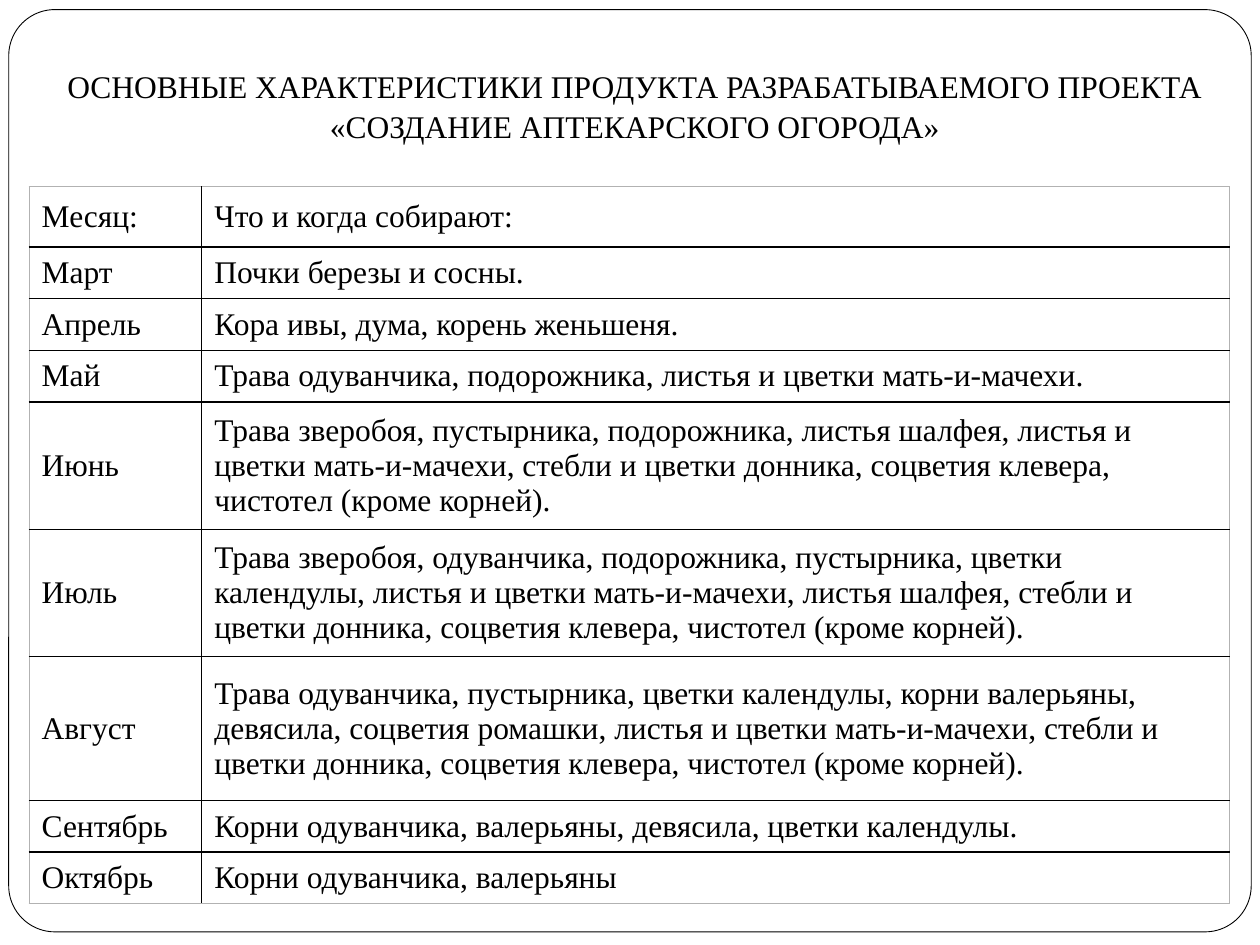
from lxml import etree
from pptx import Presentation
from pptx.dml.color import RGBColor
from pptx.enum.shapes import MSO_SHAPE
from pptx.enum.text import MSO_ANCHOR, PP_ALIGN
from pptx.oxml.ns import qn
from pptx.util import Pt

BLACK = RGBColor(0, 0, 0)
WHITE = RGBColor(255, 255, 255)
GREY = RGBColor(0xB2, 0xB2, 0xB2)
ROUND = MSO_SHAPE.ROUNDED_RECTANGLE
MIDDLE, BOTTOM = MSO_ANCHOR.MIDDLE, MSO_ANCHOR.BOTTOM
CENTER = PP_ALIGN.CENTER
FONT, SIZE = "Times New Roman", Pt(18)

TITLE = ("ОСНОВНЫЕ ХАРАКТЕРИСТИКИ ПРОДУКТА РАЗРАБАТЫВАЕМОГО ПРОЕКТА",
         "«СОЗДАНИЕ АПТЕКАРСКОГО ОГОРОДА»")
COLS = (98.7, 587.5)
# Row height, month, what is gathered
ROWS = [
    (34.6, "Месяц:", "Что и когда собирают:"),
    (29.5, "Март", "Почки березы и сосны."),
    (29.5, "Апрель", "Кора ивы, дума, корень женьшеня."),
    (29.5, "Май", "Трава одуванчика, подорожника, листья и цветки мать-и-мачехи."),
    (72.8, "Июнь", "Трава зверобоя, пустырника, подорожника, листья шалфея, "
     "листья и цветки мать-и-мачехи, стебли и цветки донника, "
     "соцветия клевера, чистотел (кроме корней)."),
    (72.8, "Июль", "Трава зверобоя, одуванчика, подорожника, пустырника, "
     "цветки календулы, листья и цветки мать-и-мачехи, листья шалфея, "
     "стебли и цветки донника, соцветия клевера, чистотел (кроме корней)."),
    (82.3, "Август", "Трава одуванчика, пустырника, цветки календулы, "
     "корни валерьяны, девясила, соцветия ромашки, листья и цветки "
     "мать-и-мачехи, стебли и цветки донника, соцветия клевера, "
     "чистотел (кроме корней)."),
    (29.5, "Сентябрь", "Корни одуванчика, валерьяны, девясила, цветки календулы."),
    (29.5, "Октябрь", "Корни одуванчика, валерьяны"),
]


def add_run(para, text):
    run = para.add_run()
    run.text = text
    run.font.name, run.font.size = FONT, SIZE
    run.font.color.rgb = BLACK


def set_edge(cell, tag, color, width):
    props = cell._tc.get_or_add_tcPr()
    line = etree.SubElement(props, qn("a:" + tag), w=str(Pt(width)))
    fill = etree.SubElement(line, qn("a:solidFill"))
    etree.SubElement(fill, qn("a:srgbClr"), val=str(color))


def fill_cell(cell, text, outer):
    # Outer edges are pale, inner ones black; edges go before the fill
    for tag, pale in outer.items():
        set_edge(cell, tag, GREY if pale else BLACK, 0.5 if pale else 1)
    cell.fill.solid()
    cell.fill.fore_color.rgb = WHITE
    cell.vertical_anchor = MIDDLE
    para = cell.text_frame.paragraphs[0]
    para.line_spacing = Pt(20)
    add_run(para, text)


deck = Presentation()
deck.slide_width, deck.slide_height = Pt(720), Pt(540)
slide = deck.slides.add_slide(deck.slide_layouts[6])
shapes = slide.shapes

# Rounded frame
frame = shapes.add_shape(ROUND, Pt(5), Pt(5.5), Pt(710), Pt(527))
frame.adjustments[0] = 0.05
frame.shadow.inherit = False
frame.fill.solid()
frame.fill.fore_color.rgb = WHITE
frame.line.color.rgb = BLACK
frame.line.width = Pt(0.5)

# Title
box = shapes.add_textbox(Pt(28), Pt(0), Pt(669.6), Pt(90)).text_frame
box.word_wrap = True
box.vertical_anchor = BOTTOM
box.margin_bottom = Pt(7.2)
para = box.paragraphs[0]
para.alignment = CENTER
para.line_spacing = 1.05
add_run(para, TITLE[0])
para.add_line_break()
add_run(para, TITLE[1])

# Harvest table
high = sum(row[0] for row in ROWS)
table = shapes.add_table(len(ROWS), len(COLS), Pt(16.6), Pt(106.6),
                         Pt(sum(COLS)), Pt(high)).table
table.first_row = table.horz_banding = False
for col, width in zip(table.columns, COLS):
    col.width = Pt(width)
for r, (height, *texts) in enumerate(ROWS):
    table.rows[r].height = Pt(height)
    for c, text in enumerate(texts):
        outer = {"lnL": c == 0, "lnR": c == len(COLS) - 1,
                 "lnT": r == 0, "lnB": r == len(ROWS) - 1}
        fill_cell(table.cell(r, c), text, outer)

deck.save("out.pptx")
